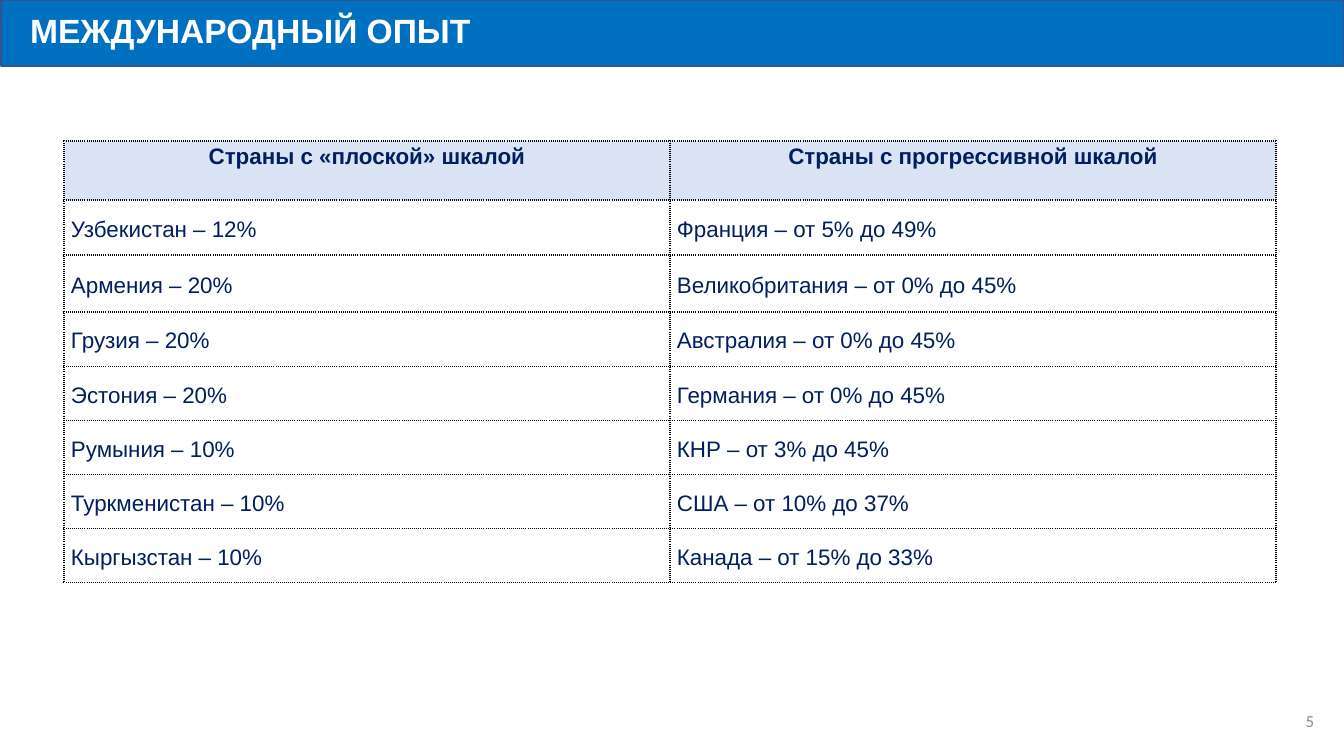
from lxml import etree
from pptx import Presentation
from pptx import util as u
from pptx.dml.color import RGBColor
from pptx.enum import text as t
from pptx.oxml import ns

HEADING = "МЕЖДУНАРОДНЫЙ ОПЫТ"
PAGE = "5"
SCALES = [
    ("Страны с «плоской» шкалой", "Страны с прогрессивной шкалой"),
    ("Узбекистан – 12%", "Франция – от 5% до 49%"),
    ("Армения – 20%", "Великобритания – от 0% до 45%"),
    ("Грузия – 20%", "Австралия – от 0% до 45%"),
    ("Эстония – 20%", "Германия – от 0% до 45%"),
    ("Румыния – 10%", "КНР – от 3% до 45%"),
    ("Туркменистан – 10%", "США – от 10% до 37%"),
    ("Кыргызстан – 10%", "Канада – от 15% до 33%"),
]
ROW_HEIGHTS = [59, 55, 57, 55, 54, 54, 54, 54]
COLUMN_WIDTH = 606
COLORS = {
    "band": "0070C0", "band_line": "325491", "white": "FFFFFF",
    "header": "DAE3F3", "ink": "011F60", "border": "000000", "page": "8C8C8C",
}


def px(length):
    return round(length * 914400 / 100.8)


def color(name):
    return RGBColor.from_string(COLORS[name])


def write(frame, words, size=16, font="Arial", ink="ink", bold=False,
          align=t.PP_ALIGN.LEFT, spacing=1.0, anchor=t.MSO_ANCHOR.MIDDLE):
    frame.word_wrap = True
    frame.vertical_anchor = anchor
    paragraph = frame.paragraphs[0]
    paragraph.alignment = align
    paragraph.line_spacing = spacing
    run = paragraph.add_run()
    run.text = words
    run.font.size = u.Pt(size)
    run.font.name = font
    run.font.bold = bold
    run.font.color.rgb = color(ink)


def add_borders(cell):
    properties = cell._tc.get_or_add_tcPr()
    for side in ("a:lnL", "a:lnR", "a:lnT", "a:lnB"):
        border = etree.SubElement(properties, ns.qn(side), w=str(u.Pt(1)))
        fill = etree.SubElement(border, ns.qn("a:solidFill"))
        etree.SubElement(fill, ns.qn("a:srgbClr"), val=COLORS["border"])
        etree.SubElement(border, ns.qn("a:prstDash"), val="sysDot")


def add_heading(slide):
    heading = slide.shapes.title
    heading.left, heading.top, heading.width, heading.height = map(px, (1, 0, 1343, 66))
    heading.fill.solid()
    heading.fill.fore_color.rgb = color("band")
    heading.line.color.rgb = color("band_line")
    heading.line.width = u.Pt(1)
    frame = heading.text_frame
    frame.auto_size = t.MSO_AUTO_SIZE.NONE
    frame.margin_left = px(29)
    write(frame, HEADING, size=24, ink="white", bold=True, spacing=0.9)


def add_scales(slide):
    scales = slide.shapes.add_table(
        len(SCALES), len(SCALES[0]), px(64), px(141),
        px(COLUMN_WIDTH * len(SCALES[0])), px(sum(ROW_HEIGHTS))).table
    scales.first_row = scales.horz_banding = False
    for column in scales.columns:
        column.width = px(COLUMN_WIDTH)
    for index, (entries, height) in enumerate(zip(SCALES, ROW_HEIGHTS)):
        scales.rows[index].height = px(height)
        header = index == 0
        for position, entry in enumerate(entries):
            cell = scales.cell(index, position)
            cell.margin_left = cell.margin_right = px(7)
            cell.margin_top = cell.margin_bottom = 0
            add_borders(cell)
            cell.fill.solid()
            cell.fill.fore_color.rgb = color("header" if header else "white")
            anchor = t.MSO_ANCHOR.TOP if header else t.MSO_ANCHOR.MIDDLE
            cell.vertical_anchor = anchor
            write(cell.text_frame, entry, bold=header, spacing=1.15, anchor=anchor,
                  align=t.PP_ALIGN.CENTER if header else t.PP_ALIGN.JUSTIFY)


def add_page(slide):
    page = slide.shapes.add_textbox(*map(px, (1022, 701, 302, 40)))
    write(page.text_frame, PAGE, size=12, font="Calibri", ink="page",
          align=t.PP_ALIGN.RIGHT)


def main():
    deck = Presentation()
    deck.slide_width, deck.slide_height = px(1344), px(756)
    slide = deck.slides.add_slide(deck.slide_layouts[5])
    add_heading(slide)
    add_scales(slide)
    add_page(slide)
    deck.save("out.pptx")


if __name__ == "__main__":
    main()
